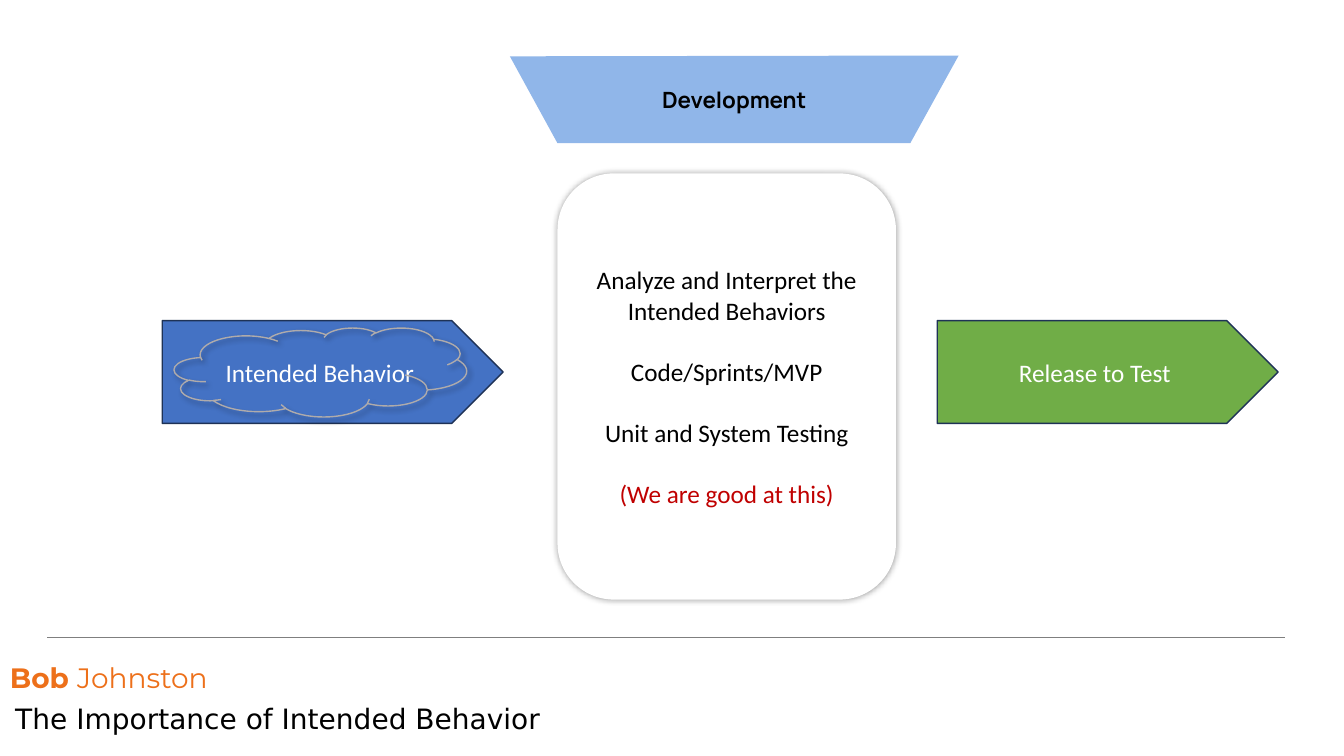
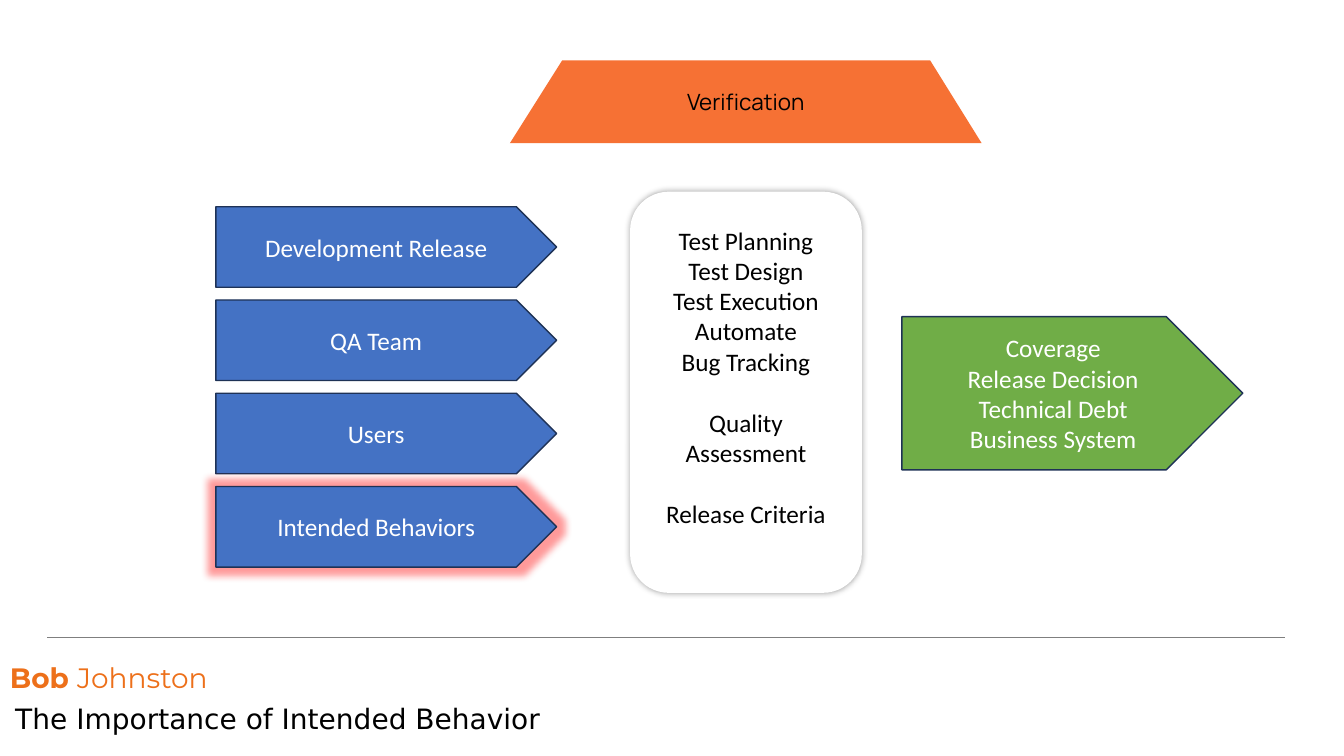
import pptx
import pptx.dml.color
import pptx.enum.shapes
import pptx.enum.text
import pptx.oxml
import pptx.oxml.ns
import pptx.util
from pptx.util import Cm

ORANGE = "ED701A"
BLACK = "000000"
WHITE = "FFFFFF"
BLUE = "4472C4"
GREEN = "70AD47"
OUTLINE = "1E3256"
RULE_GREY = "7F7F7F"
CLOUD_GREY = "AFABAB"
RED = "C00000"
GLOW_RED = "FF0000"

BODY_FONT = "Calibri"
BODY_SIZE = 18
BLANK_LINE = pptx.util.Pt(22)
PLATE_WIDTH = 8.59

SHAPES = pptx.enum.shapes.MSO_SHAPE
ALIGN = pptx.enum.text.PP_ALIGN
MIDDLE = pptx.enum.text.MSO_ANCHOR.MIDDLE


def color(hex_string):
    return pptx.dml.color.RGBColor.from_string(hex_string)


def style_font(font, name, size, hex_string, bold=False):
    font.name = name
    font.size = pptx.util.Pt(size)
    font.color.rgb = color(hex_string)
    font.bold = bold


def paint(shape, fill=None, line=None):
    shape.shadow.inherit = False
    if fill:
        shape.fill.solid()
        shape.fill.fore_color.rgb = color(fill)
    else:
        shape.fill.background()
    if line:
        shape.line.color.rgb = color(line)
        shape.line.width = pptx.util.Pt(1)
    else:
        shape.line.fill.background()


def add_effect(shape, tag, hex_string, **attributes):
    effects = shape._element.spPr.find(pptx.oxml.ns.qn("a:effectLst"))
    settings = " ".join(f'{key}="{value}"' for key, value in attributes.items())
    effects.append(pptx.oxml.parse_xml(
        f'<a:{tag} {pptx.oxml.ns.nsdecls("a")} {settings}>'
        f'<a:srgbClr val="{hex_string}"><a:alpha val="40000"/></a:srgbClr></a:{tag}>'))


def add_shadow(shape, blur, distance=0, angle=0):
    add_effect(shape, "outerShdw", BLACK, blurRad=pptx.util.Pt(blur),
               dist=pptx.util.Pt(distance), dir=angle * 60000,
               algn="ctr", rotWithShape=0)


def write_groups(shape, groups, hex_string, size=BODY_SIZE, name=BODY_FONT, bold=False):
    frame = shape.text_frame
    frame.word_wrap = True
    frame.vertical_anchor = MIDDLE
    frame.text = "\n".join(line for group in groups for line in group)
    paragraphs = iter(frame.paragraphs)
    for group_index, group in enumerate(groups):
        for line_index in range(len(group)):
            paragraph = next(paragraphs)
            paragraph.alignment = ALIGN.CENTER
            if group_index and line_index == 0:
                paragraph.space_before = BLANK_LINE
            style_font(paragraph.font, name, size, hex_string, bold)


def add_plate(slide, left, top, height, lines, fill):
    plate = slide.shapes.add_shape(
        SHAPES.PENTAGON, Cm(left), Cm(top), Cm(PLATE_WIDTH), Cm(height))
    paint(plate, fill, OUTLINE)
    write_groups(plate, [lines], WHITE)
    return plate


def add_card(slide, left, top, width, height, groups):
    card = slide.shapes.add_shape(
        SHAPES.ROUNDED_RECTANGLE, Cm(left), Cm(top), Cm(width), Cm(height))
    paint(card, WHITE)
    add_shadow(card, 5)
    write_groups(card, groups, BLACK)
    return card


def add_banner(slide, corners, text, fill, bold=False):
    points = [(Cm(x), Cm(y)) for x, y in corners]
    builder = slide.shapes.build_freeform(*points[0])
    builder.add_line_segments(points[1:], close=True)
    banner = builder.convert_to_shape()
    paint(banner, fill)
    write_groups(banner, [[text]], BLACK, 16, "Manrope", bold)


def add_footer(slide):
    author = slide.shapes.add_textbox(Cm(0), Cm(16.51), Cm(12.22), Cm(1.12))
    author.text_frame.word_wrap = True
    paragraph = author.text_frame.paragraphs[0]
    for text, bold in (("Bob ", True), ("Johnston", False)):
        run = paragraph.add_run()
        run.text = text
        style_font(run.font, "Montserrat", 20, ORANGE, bold)

    title = slide.shapes.title
    title.left, title.top, title.width, title.height = (
        Cm(0.13), Cm(17.53), Cm(15.98), Cm(1.12))
    title.text_frame.text = "The Importance of Intended Behavior"
    title.text_frame.auto_size = pptx.enum.text.MSO_AUTO_SIZE.NONE
    title.text_frame.vertical_anchor = MIDDLE
    paragraph = title.text_frame.paragraphs[0]
    paragraph.alignment = ALIGN.LEFT
    style_font(paragraph.font, "DejaVu Sans", 20, BLACK)

    rule = slide.shapes.add_connector(
        pptx.enum.shapes.MSO_CONNECTOR.STRAIGHT,
        Cm(1.19), Cm(16.05), Cm(32.39), Cm(16.05))
    rule.line.color.rgb = color(RULE_GREY)
    rule.line.width = pptx.util.Pt(0.5)
    rule._element.spPr.append(pptx.oxml.parse_xml(
        f'<a:effectLst {pptx.oxml.ns.nsdecls("a")}/>'))


def add_slide(presentation):
    slide = presentation.slides.add_slide(presentation.slide_layouts[5])
    add_footer(slide)
    return slide


def build_development(presentation):
    slide = add_slide(presentation)
    add_banner(slide, [(12.85, 1.42), (24.16, 1.4), (22.94, 3.61), (14.05, 3.61)],
               "Development", "90B6E9", bold=True)
    card = add_card(slide, 14.05, 4.37, 8.53, 10.74, [
        ["Analyze and Interpret the Intended Behaviors"],
        ["Code/Sprints/MVP"],
        ["Unit and System Testing"],
        ["(We are good at this)"],
    ])
    card.text_frame.paragraphs[-1].font.color.rgb = color(RED)
    add_plate(slide, 4.09, 8.08, 2.59, ["Intended Behavior"], BLUE)
    cloud = slide.shapes.add_shape(
        SHAPES.CLOUD, Cm(4.39), Cm(8.26), Cm(7.37), Cm(2.24))
    paint(cloud, line=CLOUD_GREY)
    add_shadow(cloud, 4, 3, 45)
    add_plate(slide, 23.62, 8.08, 2.59, ["Release to Test"], GREEN)


def build_verification(presentation):
    slide = add_slide(presentation)
    add_banner(slide, [(14.17, 1.52), (23.44, 1.52), (24.74, 3.61), (12.85, 3.61)],
               "Verification", "F67134")
    card = add_card(slide, 15.88, 4.83, 5.84, 10.11, [
        ["Test Planning", "Test Design", "Test Execution", "Automate", "Bug Tracking"],
        ["Quality Assessment"],
        ["Release Criteria"],
    ])
    card.text_frame.margin_bottom += BLANK_LINE
    inputs = ["Development Release", "QA Team", "Users", "Intended Behaviors"]
    for index, text in enumerate(inputs):
        plate = add_plate(slide, 5.44, 5.21 + 2.35 * index, 2.03, [text], BLUE)
    add_effect(plate, "glow", GLOW_RED, rad=pptx.util.Pt(11))
    add_plate(slide, 22.73, 7.98, 3.86, [
        "Coverage", "Release Decision", "Technical Debt", "Business System"], GREEN)


def main():
    presentation = pptx.Presentation()
    presentation.slide_width = Cm(33.87)
    presentation.slide_height = Cm(19.05)
    build_development(presentation)
    build_verification(presentation)
    presentation.save("out.pptx")


if __name__ == "__main__":
    main()
